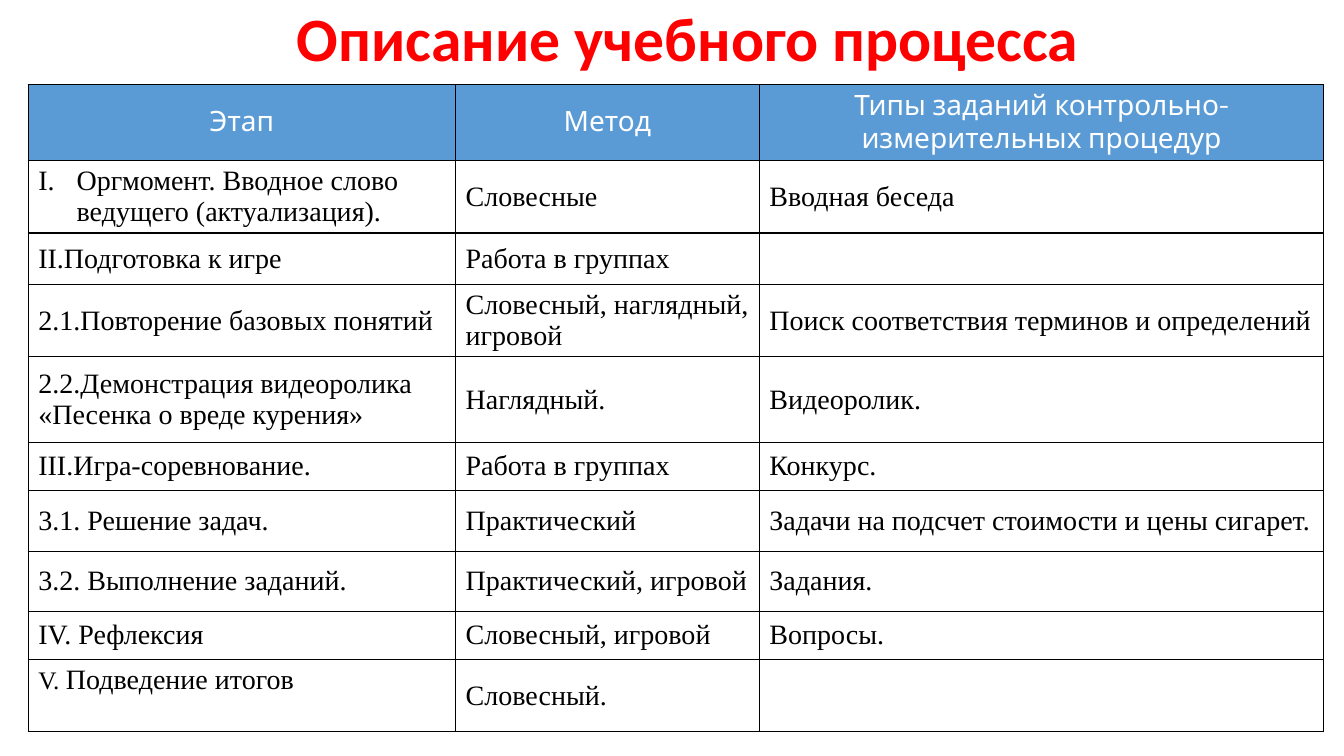
from dataclasses import dataclass

from lxml.etree import SubElement
from pptx import Presentation
from pptx.dml.color import RGBColor
from pptx.enum.text import MSO_ANCHOR as Anchor, PP_ALIGN as Align
from pptx.oxml import parse_xml
from pptx.oxml.ns import nsdecls, qn
from pptx.table import _Cell as Cell
from pptx.text.text import _Paragraph as Paragraph
from pptx.util import Inches, Pt

SLIDE_WIDTH, SLIDE_HEIGHT = Inches(13.33), Inches(7.5)
COLUMN_SHARES = (31.8, 22.6, 42)  # percent of the slide's width
BODY_FONT, HEADER_FONT, TITLE_FONT = "Times New Roman", "Karla", "Calibri"
HEADERS = ("Этап", "Метод", "Типы заданий контрольно-измерительных процедур")
HEADER_SHARE = 9.9  # percent of the slide's height


@dataclass(frozen=True)
class Stage:
    share: float  # percent of the slide's height
    name: str
    method: str
    tasks: str = ""
    numbered: bool = False
    prefix: str = ""


STAGES = (
    Stage(9.6, "Оргмомент. Вводное слово ведущего (актуализация).",
          "Словесные", "Вводная беседа", numbered=True),
    Stage(6.8, "II.Подготовка к игре", "Работа в группах"),
    Stage(9.6, "2.1.Повторение базовых понятий", "Словесный, наглядный, игровой",
          "Поиск соответствия терминов и определений"),
    Stage(11.3, "2.2.Демонстрация видеоролика «Песенка о вреде курения»",
          "Наглядный.", "Видеоролик."),
    Stage(6.4, "III.Игра-соревнование.", "Работа в группах", "Конкурс."),
    Stage(8, "3.1. Решение задач.", "Практический",
          "Задачи на подсчет стоимости и цены сигарет."),
    Stage(8, "3.2. Выполнение заданий.", "Практический, игровой", "Задания."),
    Stage(6.3, "IV. Рефлексия", "Словесный, игровой", "Вопросы."),
    Stage(9.6, "Подведение итогов", "Словесный.", prefix="V. "),
)


def across(percent: float) -> int:
    return round(SLIDE_WIDTH * percent / 100)


def down(percent: float) -> int:
    return round(SLIDE_HEIGHT * percent / 100)


def color(value: str) -> RGBColor:
    return RGBColor.from_string(value)


def write(para: Paragraph, text: str, *, size: float = 20, font: str = BODY_FONT,
          ink: str = "000000", bold: bool = False, align: Align = Align.LEFT) -> None:
    para.alignment = align
    span = para.add_run()
    span.text = text
    span.font.size, span.font.name, span.font.bold = Pt(size), font, bold
    span.font.color.rgb = color(ink)


def frame_cell(cell: Cell, fill: str = "") -> None:
    """Centre the cell vertically, fill it if a colour is given and rule its sides."""
    cell.vertical_anchor = Anchor.MIDDLE
    if fill:
        cell.fill.solid()
        cell.fill.fore_color.rgb = color(fill)
    else:
        cell.fill.background()
    properties = cell._tc.get_or_add_tcPr()
    for index, side in enumerate(("lnL", "lnR", "lnT", "lnB")):
        properties.insert(index, parse_xml(
            f'<a:{side} {nsdecls("a")} w="12700"><a:solidFill>'
            f'<a:srgbClr val="000000"/></a:solidFill></a:{side}>'))


def number_roman(para: Paragraph) -> None:
    properties = para._p.get_or_add_pPr()
    indent = Inches(0.38)
    properties.set("marL", str(indent))
    properties.set("indent", str(-indent))
    SubElement(properties, qn("a:buFont"), typeface="+mj-lt")
    SubElement(properties, qn("a:buAutoNum"), type="romanUcPeriod")


def main() -> None:
    deck = Presentation()
    deck.slide_width, deck.slide_height = SLIDE_WIDTH, SLIDE_HEIGHT
    page = deck.slides.add_slide(deck.slide_layouts[5])

    title = page.shapes.title
    title.left, title.top = across(12.8), 0
    title.width, title.height = across(76.8), down(11)
    title.text_frame.vertical_anchor = Anchor.MIDDLE
    heading = title.text_frame.paragraphs[0]
    heading.line_spacing = 0.9
    write(heading, "Описание учебного процесса", size=44, font=TITLE_FONT,
          ink="FF0000", bold=True, align=Align.CENTER)

    row_shares = (HEADER_SHARE, *(stage.share for stage in STAGES))
    table = page.shapes.add_table(
        len(row_shares), len(COLUMN_SHARES), across(2.1), down(11.2),
        across(sum(COLUMN_SHARES)), down(sum(row_shares))).table
    table.horz_banding = False
    for column, share in zip(table.columns, COLUMN_SHARES):
        column.width = across(share)
    for row, share in zip(table.rows, row_shares):
        row.height = down(share)

    for column, text in enumerate(HEADERS):
        cell = table.cell(0, column)
        frame_cell(cell, "5B9BD5")
        write(cell.text_frame.paragraphs[0], text, font=HEADER_FONT,
              ink="FFFFFF", align=Align.CENTER)

    for row, stage in enumerate(STAGES, start=1):
        for column, text in enumerate((stage.name, stage.method, stage.tasks)):
            cell = table.cell(row, column)
            frame_cell(cell)
            para = cell.text_frame.paragraphs[0]
            if column == 0 and stage.prefix:
                cell.vertical_anchor = Anchor.TOP
                write(para, stage.prefix, size=18)
            if text:
                write(para, text)
            if column == 0 and stage.numbered:
                number_roman(para)

    deck.save("out.pptx")


if __name__ == "__main__":
    main()
